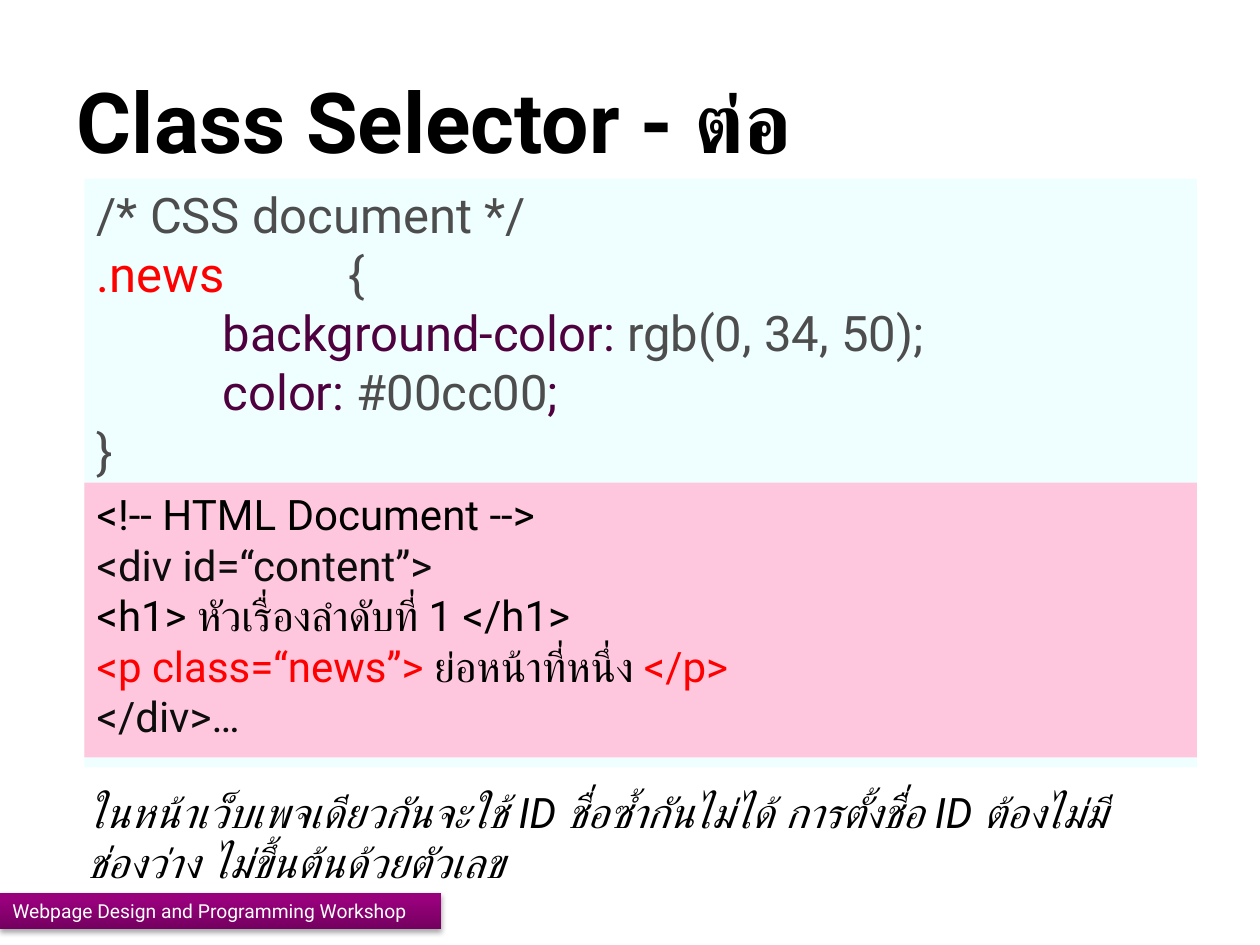
import pptx
import pptx.util
import pptx.dml.color
import pptx.enum.shapes
import pptx.enum.text
import pptx.oxml
import pptx.oxml.ns

Pt = pptx.util.Pt
MSO_ANCHOR = pptx.enum.text.MSO_ANCHOR


class Theme:
    font = "Roboto"
    title_size, css_size, html_size, footer_size = 48, 28, 24, 11
    black, ink, grey, white = "000000", "0D0D0D", "4D4D4D", "FFFFFF"
    red, plum = "FF0000", "4E003F"
    css_fill, html_fill = "EFFFFF", "FFC7DD"
    footer_dark, footer_light = "74005F", "98007C"


def rgb(value):
    return pptx.dml.color.RGBColor.from_string(value)


class Deck:
    def __init__(self, theme):
        self.theme = theme
        self.prs = pptx.Presentation()
        self.prs.slide_width, self.prs.slide_height = Pt(720), Pt(540)
        self.s = self.prs.slides.add_slide(self.prs.slide_layouts[5])

    def add_text(self, tf, lines, size, anchor=MSO_ANCHOR.TOP, tabs=None,
                 bold=None, italic=None):
        """Fill a frame; each line is a list of (text, colour) runs."""
        tf.word_wrap = True
        tf.auto_size = pptx.enum.text.MSO_AUTO_SIZE.NONE
        tf.vertical_anchor = anchor
        for i, line in enumerate(lines):
            p = tf.paragraphs[0] if i == 0 else tf.add_paragraph()
            p.alignment = pptx.enum.text.PP_ALIGN.LEFT
            if tabs and i in tabs:
                self.tab_stop(p, tabs[i])
            for text, colour in line:
                r = p.add_run()
                r.text = text
                r.font.name, r.font.size = self.theme.font, Pt(size)
                r.font.bold, r.font.italic = bold, italic
                r.font.color.rgb = rgb(colour)

    def tab_stop(self, p, pos):
        p._p.get_or_add_pPr().append(pptx.oxml.parse_xml(
            f'<a:tabLst {pptx.oxml.ns.nsdecls("a")}>'
            f'<a:tab pos="{Pt(pos)}" algn="l"/></a:tabLst>'))

    def title(self, box, text):
        sp = self.s.shapes.title
        sp.left, sp.top, sp.width, sp.height = map(Pt, box)
        self.add_text(sp.text_frame, [[(text, self.theme.black)]],
                      self.theme.title_size, MSO_ANCHOR.MIDDLE, bold=True)

    def rect(self, box):
        sp = self.s.shapes.add_shape(
            pptx.enum.shapes.MSO_SHAPE.RECTANGLE, *map(Pt, box))
        sp.shadow.inherit = False
        sp.line.fill.background()
        return sp

    def panel(self, box, fill, lines, size, tabs=None):
        sp = self.rect(box)
        sp.fill.solid()
        sp.fill.fore_color.rgb = rgb(fill)
        self.add_text(sp.text_frame, lines, size, tabs=tabs)

    def note(self, box, text):
        sp = self.s.shapes.add_textbox(*map(Pt, box))
        self.add_text(sp.text_frame, [[(text, self.theme.black)]],
                      self.theme.html_size, italic=True)

    def footer(self, box, text):
        t = self.theme
        sp = self.rect(box)
        sp.fill.gradient()
        sp.fill.gradient_angle = 90
        stops = zip(sp.fill.gradient_stops, (t.footer_dark, t.footer_light), (0, 0.8))
        for stop, colour, position in stops:
            stop.color.rgb = rgb(colour)
            stop.position = position
        # Soft shadow straight below the bar
        effects = sp._element.spPr.find(pptx.oxml.ns.qn("a:effectLst"))
        effects.append(pptx.oxml.parse_xml(
            f'<a:outerShdw {pptx.oxml.ns.nsdecls("a")} blurRad="{Pt(3.1)}" '
            f'dist="{Pt(1.8)}" dir="5400000" rotWithShape="0">'
            f'<a:srgbClr val="{t.black}"><a:alpha val="35000"/></a:srgbClr>'
            '</a:outerShdw>'))
        self.add_text(sp.text_frame, [[(text, t.white)]], t.footer_size,
                      MSO_ANCHOR.MIDDLE)


def main():
    t = Theme()
    deck = Deck(t)
    deck.title((36.7, 43.2, 648, 51.1), "Class Selector - ต่อ")

    # Code panels share their left edge and width
    left, width = 48.2, 635.8
    css = [
        [("/* CSS document */", t.grey)],
        [(".news", t.red), ("\t{", t.grey)],
        [("\tbackground-color: ", t.plum), ("rgb(0, 34, 50);", t.grey)],
        [("\tcolor: ", t.plum), ("#00cc00", t.grey), (";", t.plum)],
        [("}", t.grey)],
    ]
    deck.panel((left, 102.2, width, 336.2), t.css_fill, css, t.css_size,
               tabs={1: 144, 2: 72, 3: 72})
    html = [
        [("<!-- HTML Document -->", t.black)],
        [("<div id=“content”>", t.ink)],
        [("<h1> หัวเรื่องลำดับที่ 1 </h1>", t.black)],
        [("<p class=“news”> ", t.red), ("ย่อหน้าที่หนึ่ง ", t.black), ("</p>", t.red)],
        [("</div>…", t.ink)],
    ]
    deck.panel((left, 275.8, width, 157), t.html_fill, html, t.html_size)

    # Naming rule and footer bar
    deck.note((42.5, 445.7, 607.7, 65.5),
              "ในหน้าเว็บเพจเดียวกันจะใช้ ID ชื่อซ้ำกันไม่ได้ "
              "การตั้งชื่อ ID ต้องไม่มีช่องว่าง ไม่ขึ้นต้นด้วยตัวเลข")
    deck.footer((0, 510, 252, 21), "Webpage Design and Programming Workshop")
    deck.prs.save("out.pptx")


if __name__ == "__main__":
    main()
